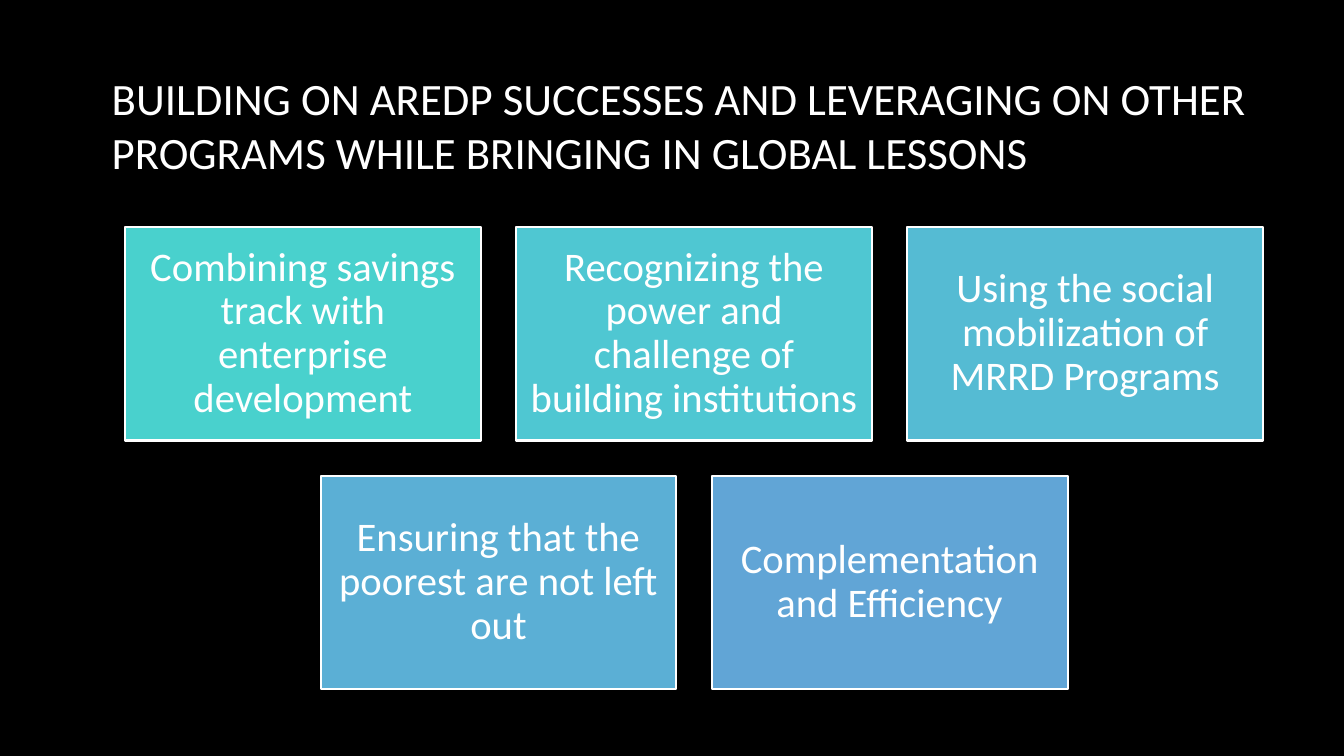
from pptx import Presentation
from pptx.dml.color import RGBColor
from pptx.enum.shapes import MSO_SHAPE as SHAPE
from pptx.enum.text import MSO_ANCHOR as ANCHOR, PP_ALIGN as ALIGN
from pptx.util import Inches, Pt

WHITE = "FFFFFF"
TITLE = ("BUILDING ON AREDP SUCCESSES AND LEVERAGING ON OTHER "
         "PROGRAMS WHILE BRINGING IN GLOBAL LESSONS")
CARD_ROWS = [
    [("Combining savings track with enterprise development", "49D1CD"),
     ("Recognizing the power and challenge of building institutions", "4FC7D2"),
     ("Using the social mobilization of MRRD Programs", "55BBD3")],
    [("Ensuring that the poorest are not left out", "5BAFD5"),
     ("Complementation and Efficiency", "61A5D6")],
]


def paint(target, color):
    target.solid()
    target.fore_color.rgb = RGBColor.from_string(color)


def write(shape, text, size):
    tf = shape.text_frame
    tf.word_wrap = True
    tf.vertical_anchor = ANCHOR.MIDDLE
    tf.text = text
    p = tf.paragraphs[0]
    font = p.runs[0].font
    font.name, font.size = "Calibri", Pt(size)
    paint(font.fill, WHITE)
    return tf, p


def add_title(s, x, y, w, h):
    box = s.shapes.add_textbox(*map(Inches, (x, y, w, h)))
    write(box, TITLE, 32)


def add_card(s, x, y, w, h, text, color):
    card = s.shapes.add_shape(SHAPE.RECTANGLE, *map(Inches, (x, y, w, h)))
    card.shadow.inherit = False
    paint(card.fill, color)
    paint(card.line.fill, WHITE)
    card.line.width = Pt(1.5)
    tf, p = write(card, text, 29)
    tf.margin_left = tf.margin_right = Inches(0.12)
    tf.margin_top = tf.margin_bottom = Inches(0.12)
    p.alignment = ALIGN.CENTER
    p.line_spacing = 0.9


def add_card_grid(s, x, y, w, h, gap=0.35):
    columns = max(len(row) for row in CARD_ROWS)
    card_w = (w - gap * (columns - 1)) / columns
    card_h = (h - gap * (len(CARD_ROWS) - 1)) / len(CARD_ROWS)
    for i, row in enumerate(CARD_ROWS):
        # Shorter rows are centred
        indent = (columns - len(row)) * (card_w + gap) / 2
        for j, (text, color) in enumerate(row):
            add_card(s, x + indent + j * (card_w + gap), y + i * (card_h + gap),
                     card_w, card_h, text, color)


def main():
    prs = Presentation()
    prs.slide_width, prs.slide_height = Inches(13.33), Inches(7.5)
    s = prs.slides.add_slide(prs.slide_layouts[6])
    paint(s.background.fill, "000000")
    # Heading
    add_title(s, 1.01, 0.53, 11.55, 1.41)
    # Cards
    add_card_grid(s, 1.24, 2.25, 11.29, 4.59)
    prs.save("out.pptx")


if __name__ == "__main__":
    main()
